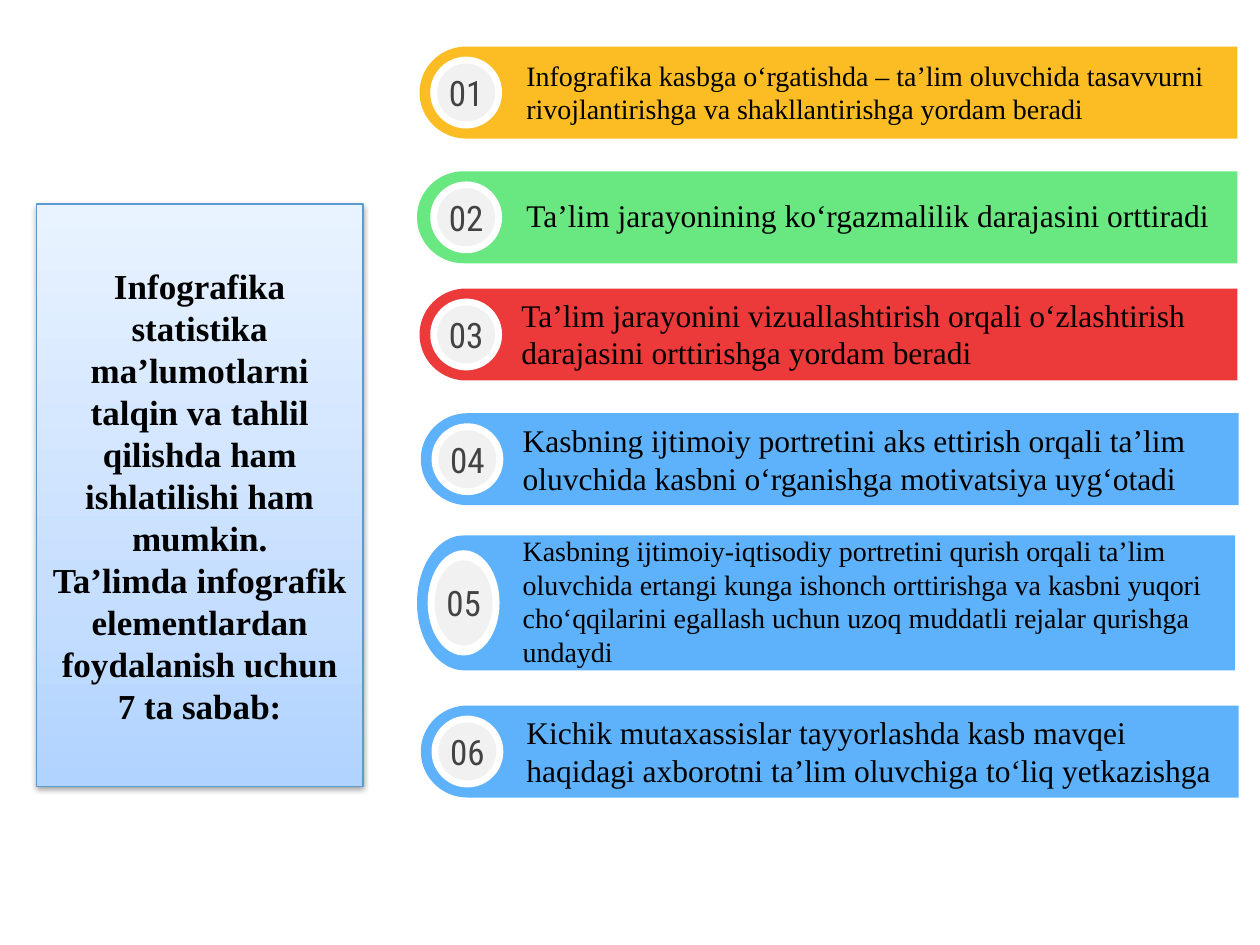
import copy
import math
from dataclasses import dataclass

from lxml import etree
from pptx import Presentation
from pptx import util as u
from pptx.dml.color import RGBColor
from pptx.enum import shapes, text
from pptx.oxml.ns import qn

BLACK = RGBColor(0, 0, 0)
WHITE = RGBColor(255, 255, 255)
DISC_GREY = RGBColor(0xF1, 0xF1, 0xF1)
NUMBER_GREY = RGBColor(0x43, 0x43, 0x43)
YELLOW = RGBColor(0xFC, 0xBD, 0x24)
GREEN = RGBColor(0x69, 0xE7, 0x81)
RED = RGBColor(0xEC, 0x3A, 0x3B)
BLUE = RGBColor(0x5E, 0xB2, 0xFC)
TITLE_LINE = RGBColor(0x5D, 0x9A, 0xCF)
TITLE_GRADIENT = [(0, "B0D3FF"), (35, "C7DFFF"), (100, "E9F3FF")]

BODY_FORMAT = {"name": "Times New Roman", "bold": False}
TITLE_FORMAT = {"name": "Times New Roman", "size": u.Pt(20), "bold": True}
NUMBER_FORMAT = {"name": "Roboto Condensed", "size": u.Pt(20)}

TITLE = ("Infografika statistika ma’lumotlarni talqin va tahlil qilishda ham "
         "ishlatilishi ham mumkin.\vTa’limda infografik elementlardan "
         "foydalanish uchun 7 ta sabab:")

BAR_HEIGHT = 0.73
CAP_RADIUS = 0.37
RING_SIZE, DISC_SIZE = 0.57, 0.46


@dataclass
class Reason:
    """One numbered bar; lengths in inches."""
    wording: str
    colour: RGBColor
    left: float
    top: float
    right: float
    centre_x: float
    text_left: float
    text_top: float
    text_height: float
    size: int = 18
    height: float = BAR_HEIGHT


REASONS = [
    Reason("Infografika kasbga o‘rgatishda – ta’lim oluvchida tasavvurni "
           "rivojlantirishga va shakllantirishga yordam beradi",
           YELLOW, 3.33, 0.37, 9.82, 3.7, 4.08, 0.37, 0.72, 16),
    Reason("Ta’lim jarayonining ko‘rgazmalilik darajasini orttiradi",
           GREEN, 3.31, 1.36, 9.82, 3.7, 4.08, 1.34, 0.73),
    Reason("Ta’lim jarayonini vizuallashtirish orqali o‘zlashtirish "
           "darajasini orttirishga yordam beradi",
           RED, 3.33, 2.29, 9.82, 3.7, 4.04, 2.29, 0.71),
    Reason("Kasbning ijtimoiy portretini aks ettirish orqali ta’lim "
           "oluvchida kasbni o‘rganishga motivatsiya uyg‘otadi",
           BLUE, 3.34, 3.28, 9.83, 3.71, 4.05, 3.28, 0.72),
    Reason("Kasbning ijtimoiy-iqtisodiy portretini qurish orqali ta’lim "
           "oluvchida ertangi kunga ishonch orttirishga va kasbni yuqori "
           "cho‘qqilarini egallash uchun uzoq muddatli rejalar qurishga undaydi",
           BLUE, 3.31, 4.25, 9.8, 3.68, 4.05, 4.22, 1.1, 16, 1.07),
    Reason("Kichik mutaxassislar tayyorlashda kasb mavqei haqidagi axborotni "
           "ta’lim oluvchiga to‘liq yetkazishga",
           BLUE, 3.34, 5.6, 9.83, 3.71, 4.08, 5.6, 0.72),
]


def write_text(shape, wording, formats, colour, alignment, insets, wrap=True):
    frame = shape.text_frame
    side, vertical = insets
    frame_formats = {
        "word_wrap": wrap, "auto_size": text.MSO_AUTO_SIZE.NONE,
        "vertical_anchor": text.MSO_ANCHOR.MIDDLE,
        "margin_left": u.Inches(side), "margin_right": u.Inches(side),
        "margin_top": u.Inches(vertical), "margin_bottom": u.Inches(vertical),
    }
    for name, value in frame_formats.items():
        setattr(frame, name, value)
    paragraph = frame.paragraphs[0]
    paragraph.text = wording
    paragraph.alignment = alignment
    for run in paragraph.runs:
        for name, value in formats.items():
            setattr(run.font, name, value)
        run.font.color.rgb = colour
    # Line breaks take the size of the text around them
    for line_break in paragraph._p.findall(qn("a:br")):
        line_break.insert(0, copy.deepcopy(paragraph.runs[0]._r.rPr))


def paint(shape, colour):
    shape.shadow.inherit = False
    shape.fill.solid()
    shape.fill.fore_color.rgb = colour
    shape.line.fill.background()


def add_title(slide):
    title = slide.shapes.title
    title.left, title.top = u.Inches(0.29), u.Inches(1.62)
    title.width, title.height = u.Inches(2.59), u.Inches(4.62)
    write_text(title, TITLE, TITLE_FORMAT, BLACK, text.PP_ALIGN.CENTER, (0.1, 0.1))

    # Three-stop gradient, running upwards
    title.fill.gradient()
    title.fill.gradient_angle = 90
    stops = title._element.spPr.find(".//" + qn("a:gsLst"))
    for stop in list(stops):
        stops.remove(stop)
    for position, colour in TITLE_GRADIENT:
        stop = etree.SubElement(stops, qn("a:gs"), pos=str(position * 1000))
        etree.SubElement(stop, qn("a:srgbClr"), val=colour)
    title.line.color.rgb = TITLE_LINE
    title.line.width = u.Pt(0.75)

    # Soft shadow below
    title.shadow.inherit = False
    effects = title._element.spPr.find(qn("a:effectLst"))
    shadow = etree.SubElement(
        effects, qn("a:outerShdw"), blurRad=str(u.Pt(3.1)), dist=str(u.Pt(1.6)),
        dir="5400000", rotWithShape="0")
    colour = etree.SubElement(shadow, qn("a:srgbClr"), val="000000")
    etree.SubElement(colour, qn("a:alpha"), val="38000")


def add_bar(group, reason):
    """Bar with a rounded left end and a square right end."""
    middle_y = reason.top + reason.height / 2
    cap = [(reason.left + CAP_RADIUS * (1 - math.sin(angle)),
            middle_y - reason.height / 2 * math.cos(angle))
           for angle in (math.pi * step / 40 for step in range(41))]
    corners = [(reason.right, reason.top + reason.height), (reason.right, reason.top)]
    points = [(u.Inches(x), u.Inches(y)) for x, y in cap + corners]
    builder = group.shapes.build_freeform(*points[0])
    builder.add_line_segments(points[1:], close=True)
    paint(builder.convert_to_shape(), reason.colour)


def add_disc(group, reason, size, colour):
    height = size * reason.height / BAR_HEIGHT
    disc = group.shapes.add_shape(
        shapes.MSO_SHAPE.OVAL, u.Inches(reason.centre_x - size / 2),
        u.Inches(reason.top + (reason.height - height) / 2),
        u.Inches(size), u.Inches(height))
    paint(disc, colour)
    return disc


def add_reason(slide, number, reason):
    group = slide.shapes.add_group_shape()
    add_bar(group, reason)
    add_disc(group, reason, RING_SIZE, WHITE)
    disc = add_disc(group, reason, DISC_SIZE, DISC_GREY)
    write_text(disc, f"{number:02}", NUMBER_FORMAT, NUMBER_GREY,
               text.PP_ALIGN.CENTER, (0, 0), wrap=False)
    box = group.shapes.add_textbox(
        u.Inches(reason.text_left), u.Inches(reason.text_top),
        u.Inches(reason.right - reason.text_left), u.Inches(reason.text_height))
    write_text(box, reason.wording, {**BODY_FORMAT, "size": u.Pt(reason.size)},
               BLACK, text.PP_ALIGN.LEFT, (0.1, 0.1))


def main():
    presentation = Presentation()
    presentation.slide_width = u.Inches(10)
    presentation.slide_height = u.Inches(7.5)
    slide = presentation.slides.add_slide(presentation.slide_layouts[5])
    add_title(slide)
    for number, reason in enumerate(REASONS, start=1):
        add_reason(slide, number, reason)
    presentation.save("out.pptx")


if __name__ == "__main__":
    main()
